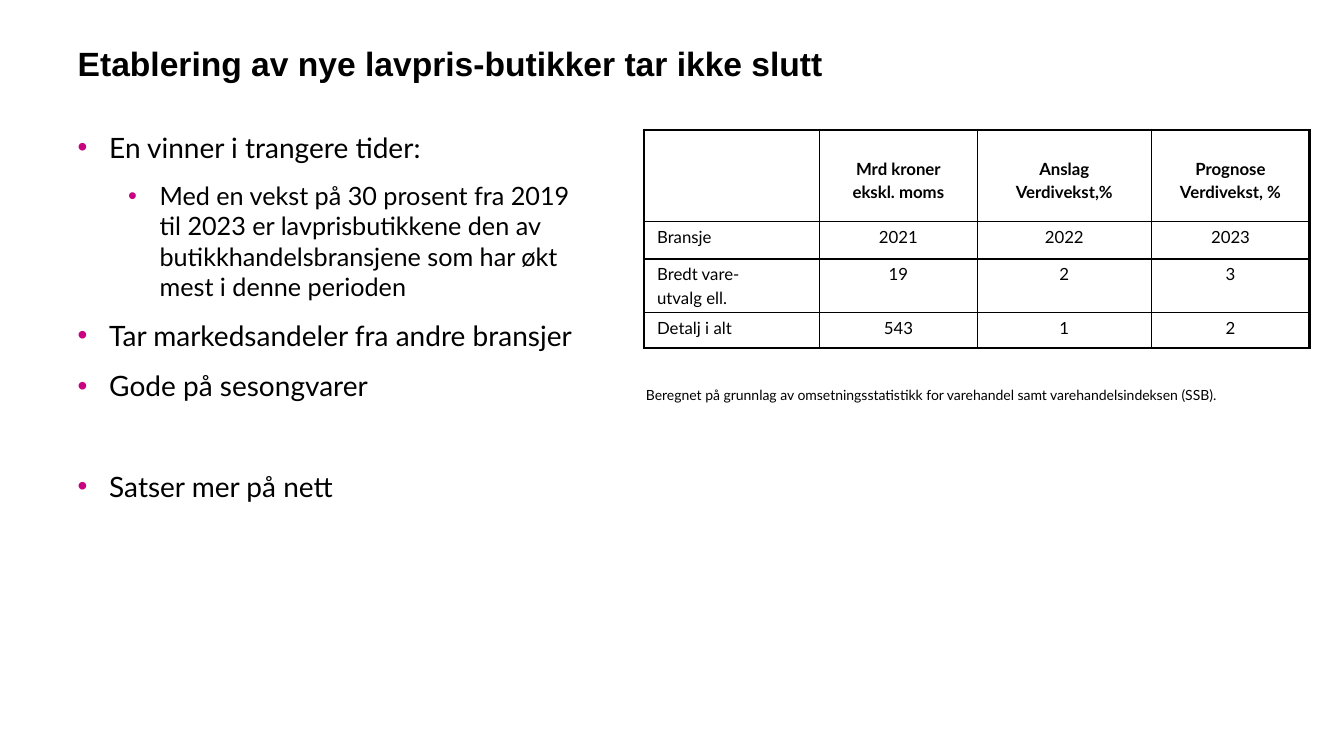
from dataclasses import dataclass

from lxml.etree import SubElement
from pptx import Presentation
from pptx.dml.color import RGBColor
from pptx.enum.text import MSO_ANCHOR, MSO_AUTO_SIZE, PP_ALIGN
from pptx.oxml import parse_xml
from pptx.oxml.ns import nsdecls, qn
from pptx.util import Pt


@dataclass(frozen=True)
class Theme:
    ink: str = "000000"
    bullet: str = "C9007F"
    heading_font: str = "Arial"
    text_font: str = "Lato"
    title: int = 24
    levels: tuple = (20, 18)
    table: int = 12
    note: int = 10
    thin: float = 1
    thick: float = 2.25


theme = Theme()


def set_font(paragraph, size, name=theme.text_font, bold=False):
    for run in paragraph.runs:
        run.font.size = Pt(size)
        run.font.name = name
        run.font.bold = bold
        run.font.color.rgb = RGBColor.from_string(theme.ink)


def place(shape, left, top, width, height):
    shape.left, shape.top = Pt(left), Pt(top)
    shape.width, shape.height = Pt(width), Pt(height)
    frame = shape.text_frame
    frame.margin_left = frame.margin_right = frame.margin_top = frame.margin_bottom = 0
    frame.auto_size = MSO_AUTO_SIZE.NONE
    frame.word_wrap = True
    return frame


prs = Presentation()
prs.slide_width, prs.slide_height = Pt(960), Pt(540)
slide = prs.slides.add_slide(prs.slide_layouts[1])

# Title
title = place(slide.shapes.title, 55.5, 21.6, 849.6, 43.2)
title.text = "Etablering av nye lavpris-butikker tar ikke slutt"
title.vertical_anchor = MSO_ANCHOR.MIDDLE
heading = title.paragraphs[0]
heading.alignment = PP_ALIGN.LEFT
heading.line_spacing = Pt(33)
set_font(heading, theme.title, theme.heading_font, bold=True)

# Bullet list: level, space before, text
points = [
    (0, 0, "En vinner i trangere tider:"),
    (1, 6, "Med en vekst på 30 prosent fra 2019 til 2023 er lavprisbutikkene "
           "den av butikkhandelsbransjene som har økt mest i denne perioden"),
    (0, 6, "Tar markedsandeler fra andre bransjer"),
    (0, 6, "Gode på sesongvarer"),
    (0, 42, "Satser mer på nett"),
]
body = place(slide.placeholders[1], 55.5, 92.9, 367.2, 383.8)
body.vertical_anchor = MSO_ANCHOR.TOP
body.text = "\n".join(text for _, _, text in points)
for point, (level, space_before, _) in zip(body.paragraphs, points):
    props = point._p.get_or_add_pPr()
    props.set("marL", str(Pt(22.5 + 36 * level)))
    props.set("indent", str(Pt(-22.5)))
    SubElement(SubElement(props, qn("a:buClr")), qn("a:srgbClr"), val=theme.bullet)
    SubElement(props, qn("a:buFont"), typeface="Arial")
    SubElement(props, qn("a:buChar"), char="•")
    point.level = level
    point.space_before, point.space_after = Pt(space_before), Pt(6)
    set_font(point, theme.levels[level])

# Growth table
rows = [
    ["", "Mrd kroner\nekskl. moms", "Anslag\nVerdivekst,%", "Prognose\nVerdivekst, %"],
    ["Bransje", "2021", "2022", "2023"],
    ["Bredt vare-\nutvalg ell.", "19", "2", "3"],
    ["Detalj i alt", "543", "1", "2"],
]
column_widths = [125.5, 112.5, 124.5, 113]
row_heights = [65.5, 26.6, 34, 25.2]
growth = slide.shapes.add_table(
    len(rows), len(column_widths), Pt(460), Pt(92.9),
    Pt(sum(column_widths)), Pt(sum(row_heights))).table
growth.first_row = growth.horz_banding = False
for column, width in zip(growth.columns, column_widths):
    column.width = Pt(width)
for row, height in zip(growth.rows, row_heights):
    row.height = Pt(height)

last_row, last_column = len(rows) - 1, len(column_widths) - 1
for r, texts in enumerate(rows):
    for c, text in enumerate(texts):
        cell = growth.cell(r, c)
        cell.text = text
        cell.fill.background()
        cell.margin_left = cell.margin_right = Pt(9.4)
        cell.margin_top = Pt(20.4 if r == 0 else 3.6)
        cell.margin_bottom = Pt(3.6)
        for i, line in enumerate(cell.text_frame.paragraphs):
            line.alignment = PP_ALIGN.CENTER if c else PP_ALIGN.LEFT
            line.space_before = Pt(2.4 if i else 0)
            set_font(line, theme.table, bold=r == 0)
        thick_sides = {"R": c == last_column, "T": r == 0, "B": r == last_row}
        for position, side in enumerate("LRTB"):
            weight = theme.thick if thick_sides.get(side) else theme.thin
            cell._tc.get_or_add_tcPr().insert(position, parse_xml(
                f'<a:ln{side} {nsdecls("a")} w="{Pt(weight)}"><a:solidFill>'
                f'<a:srgbClr val="{theme.ink}"/></a:solidFill></a:ln{side}>'))

# Source note
note = place(slide.shapes.add_textbox(0, 0, 0, 0), 454.3, 272.9, 487.4, 31.7)
note.margin_left = note.margin_right = Pt(7.2)
note.margin_top = note.margin_bottom = Pt(3.6)
note.text = ("Beregnet på grunnlag av omsetningsstatistikk for varehandel "
             "samt varehandelsindeksen (SSB).")
set_font(note.paragraphs[0], theme.note)

prs.save("out.pptx")
